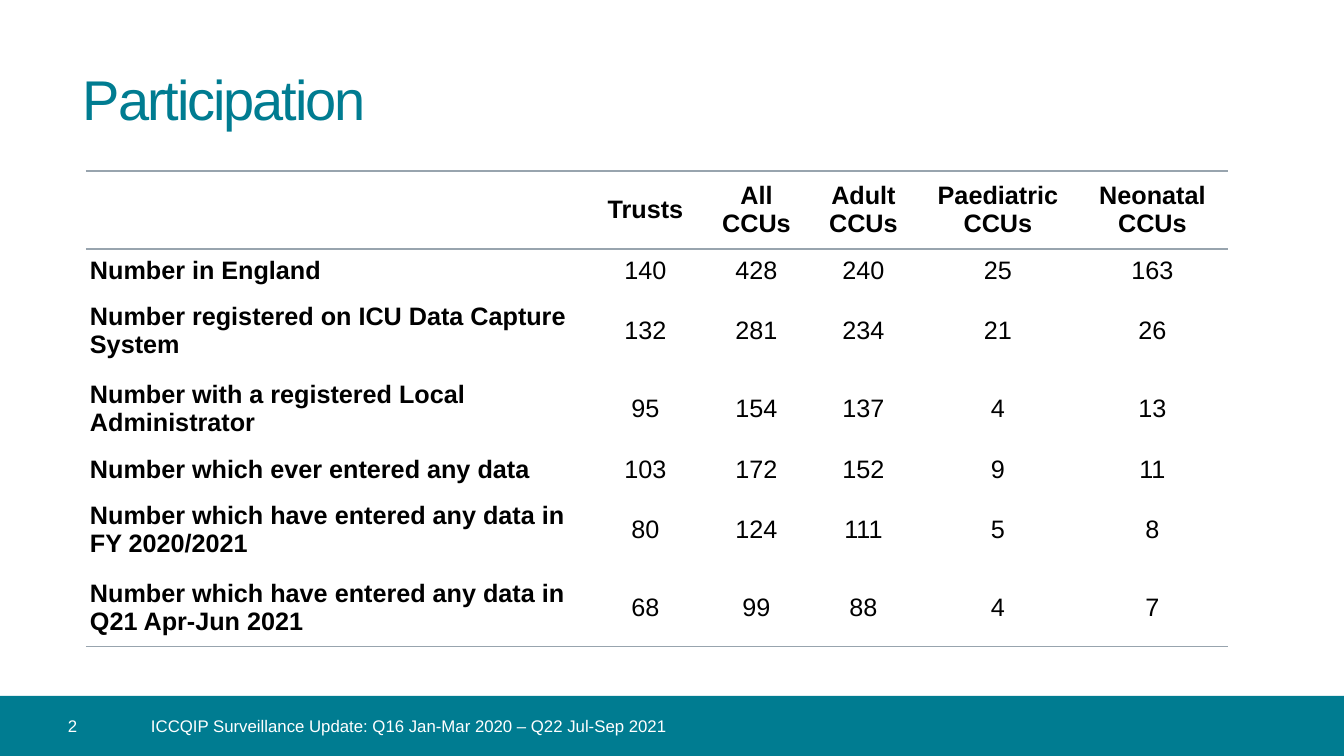
import pptx
import pptx.dml.color
import pptx.enum.shapes
import pptx.enum.text
import pptx.oxml
import pptx.oxml.ns
import pptx.util

EMU_PER_PX = 914400 / 100.8
COLORS = {"teal": "007C91", "rule": "98A4AE", "text": "000000", "white": "FFFFFF"}
ANCHOR = pptx.enum.text.MSO_ANCHOR
ALIGN = pptx.enum.text.PP_ALIGN

COL_WIDTHS = [500, 119, 103, 111, 158, 151]
ROW_HEIGHTS = [78, 43, 78, 78, 43, 78, 78]
ROWS = [
    ["", "Trusts", "All CCUs", "Adult CCUs", "Paediatric CCUs", "Neonatal CCUs"],
    ["Number in England", 140, 428, 240, 25, 163],
    ["Number registered on ICU Data Capture System", 132, 281, 234, 21, 26],
    ["Number with a registered Local Administrator", 95, 154, 137, 4, 13],
    ["Number which ever entered any data", 103, 172, 152, 9, 11],
    ["Number which have entered any data in FY 2020/2021", 80, 124, 111, 5, 8],
    ["Number which have entered any data in Q21 Apr-Jun 2021", 68, 99, 88, 4, 7],
]


def px(n):
    return pptx.util.Emu(round(n * EMU_PER_PX))


def rgb(name):
    return pptx.dml.color.RGBColor.from_string(COLORS[name])


def set_font(p, size, color, bold=False):
    p.font.name = "Arial"
    p.font.size = pptx.util.Pt(size)
    p.font.bold = bold
    p.font.color.rgb = rgb(color)


def fill_text(sp, text, size, color, left=0, anchor=ANCHOR.MIDDLE):
    tf = sp.text_frame
    tf.word_wrap = True
    tf.vertical_anchor = anchor
    tf.margin_left = px(left)
    tf.margin_top = tf.margin_right = tf.margin_bottom = 0
    p = tf.paragraphs[0]
    p.alignment = ALIGN.LEFT
    r = p.add_run()
    r.text = text
    set_font(p, size, color)
    return r


def add_text(slide, box, text, size, color, anchor=ANCHOR.MIDDLE):
    sp = slide.shapes.add_textbox(*map(px, box))
    return fill_text(sp, text, size, color, anchor=anchor)


def add_bar(slide, box, text, left):
    sp = slide.shapes.add_shape(pptx.enum.shapes.MSO_SHAPE.RECTANGLE, *map(px, box))
    sp.shadow.inherit = False
    sp.fill.solid()
    sp.fill.fore_color.rgb = rgb("teal")
    sp.line.fill.background()
    fill_text(sp, text, 12, "white", left)


def set_borders(cell, sides):
    tcPr = cell._tc.get_or_add_tcPr()
    for i, side in enumerate(("L", "R", "T", "B")):
        fill = (f'<a:solidFill><a:srgbClr val="{COLORS["rule"]}"/></a:solidFill>'
                if side in sides else "<a:noFill/>")
        tcPr.insert(i, pptx.oxml.parse_xml(
            f'<a:ln{side} {pptx.oxml.ns.nsdecls("a")} w="12700">{fill}</a:ln{side}>'))


def add_table(slide, left, top):
    box = (left, top, sum(COL_WIDTHS), sum(ROW_HEIGHTS))
    table = slide.shapes.add_table(len(ROWS), len(COL_WIDTHS), *map(px, box)).table
    table.first_row = table.horz_banding = False
    for column, width in zip(table.columns, COL_WIDTHS):
        column.width = px(width)
    for i, (row, height) in enumerate(zip(ROWS, ROW_HEIGHTS)):
        table.rows[i].height = px(height)
        # Rules frame the header row and close the table
        sides = ("T" if i < 2 else "") + ("B" if i in (0, len(ROWS) - 1) else "")
        for j, value in enumerate(row):
            cell = table.cell(i, j)
            cell.fill.background()
            set_borders(cell, sides)
            cell.vertical_anchor = ANCHOR.MIDDLE
            cell.margin_left = cell.margin_right = px(4)
            cell.margin_top = cell.margin_bottom = px(4)
            cell.text = str(value)
            p = cell.text_frame.paragraphs[0]
            p.alignment = ALIGN.CENTER if j else ALIGN.LEFT
            set_font(p, 18, "text", bold=i == 0 or j == 0)


def main():
    prs = pptx.Presentation()
    prs.slide_width, prs.slide_height = px(1344), px(756)
    slide = prs.slides.add_slide(prs.slide_layouts[6])

    # Title, with tightened letter spacing
    r = add_text(slide, (83, 60, 1180, 72), "Participation", 40, "teal", ANCHOR.BOTTOM)
    r._r.get_or_add_rPr().set("spc", "-150")

    # Participation figures
    add_table(slide, 86, 171)

    # Footer bar with slide number and report name
    add_bar(slide, (0, 696, 1344, 60), "2", 68)
    add_text(slide, (151, 696, 1166, 60),
             "ICCQIP Surveillance Update: Q16 Jan-Mar 2020 – Q22 Jul-Sep 2021", 12, "white")

    prs.save("out.pptx")


if __name__ == "__main__":
    main()
